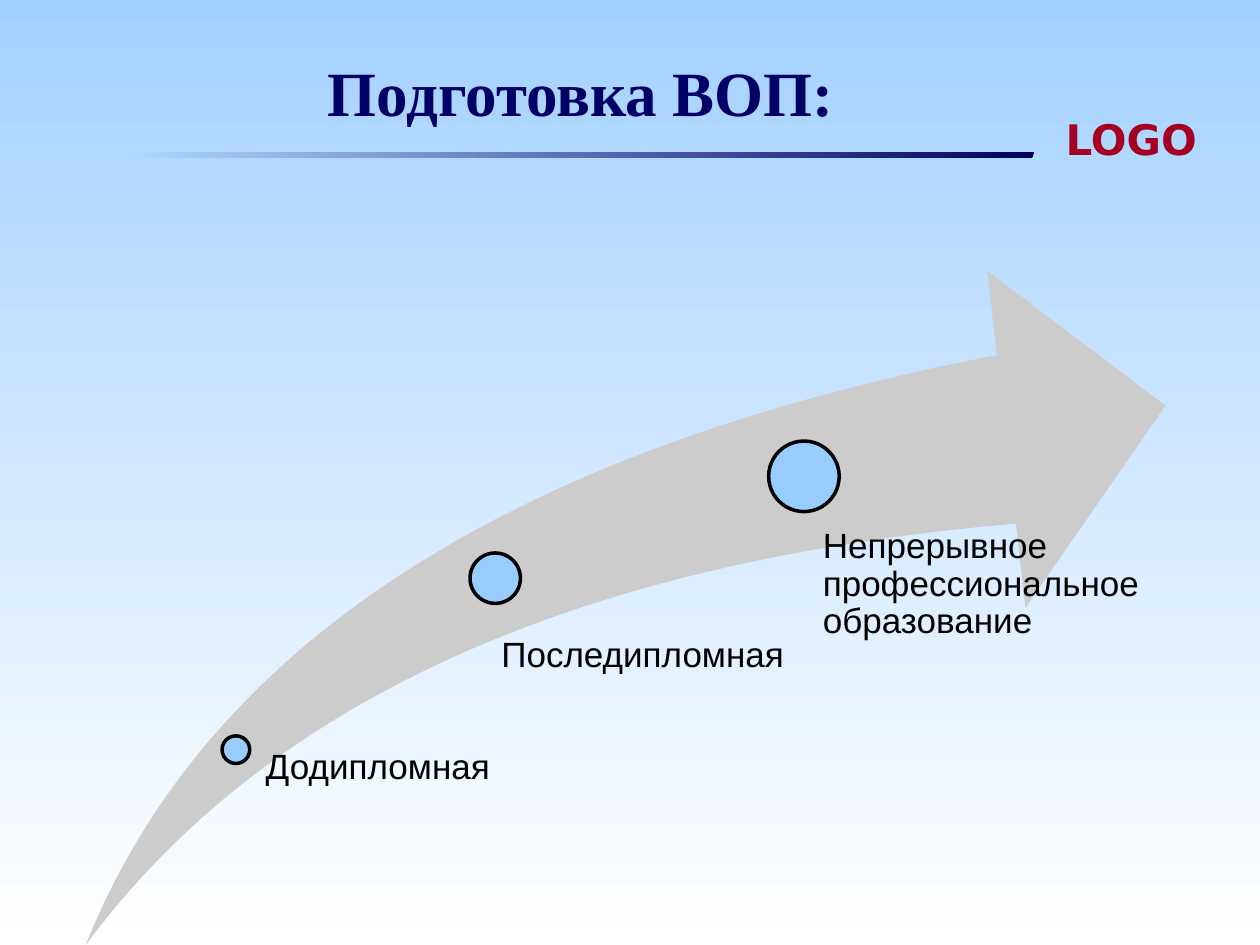
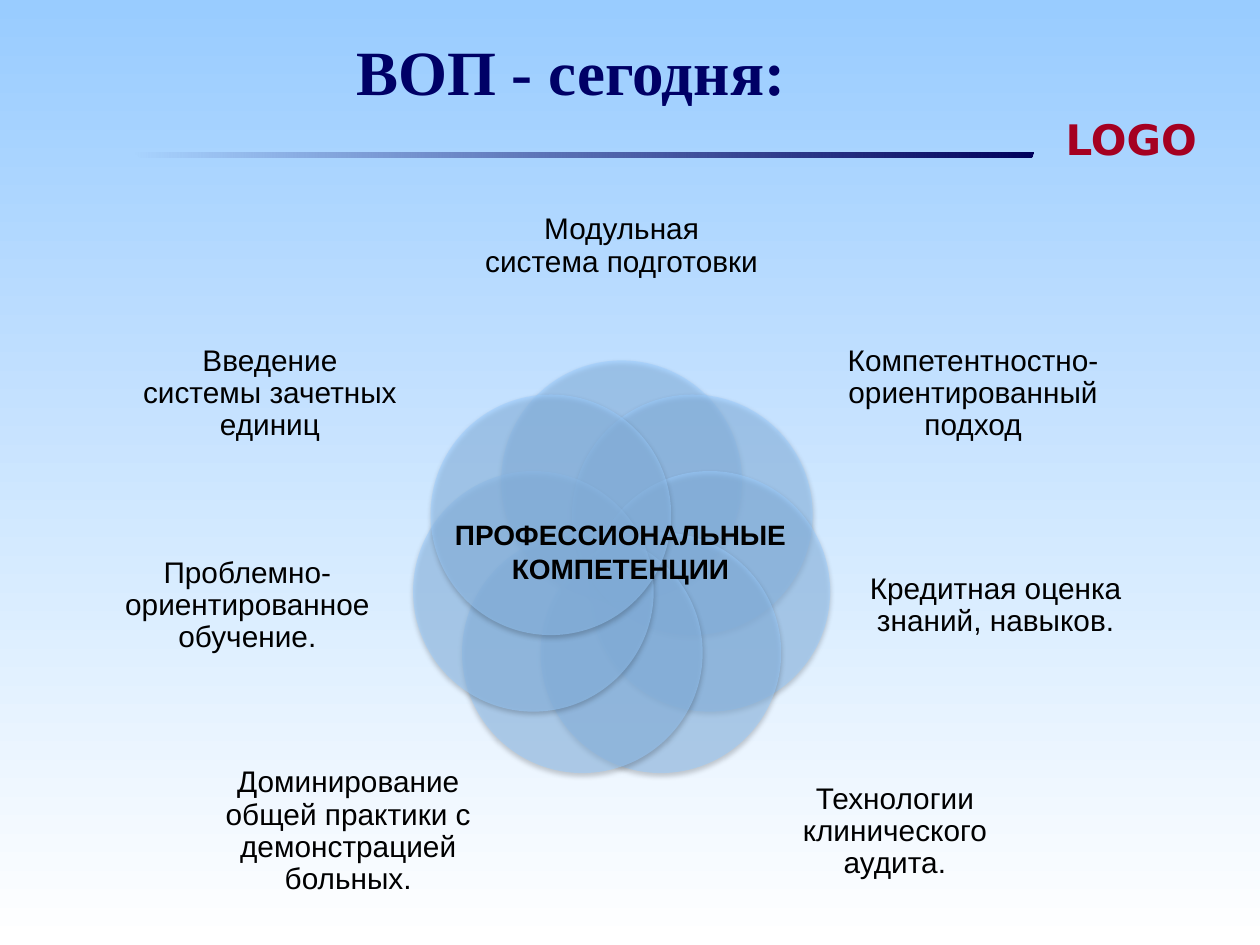
from math import cos, pi, sin
from lxml.etree import SubElement
from pptx import Presentation
from pptx.dml.color import RGBColor
from pptx.enum.shapes import MSO_SHAPE as Preset
from pptx.enum.text import MSO_ANCHOR as Anchor, MSO_AUTO_SIZE as AutoSize, PP_ALIGN as Align
from pptx.oxml.ns import qn
from pptx.util import Pt

NAVY, DEEP_NAVY, RED = "000066", "00005C", "A50021"
SKY, GREY, BLACK, WHITE = "99CCFF", "CCCCCC", "000000", "FFFFFF"
BODY_FONT, TITLE_FONT, MARK_FONT = "Arial", "Times New Roman", "DejaVu Sans"

STAGES = [
    ("Додипломная", (85.8, 273.6, 15.8), (94.3, 273.6, 144, 111.6), 8.6),
    ("Последипломная", (234, 175.6, 28.8), (222.4, 209.5, 186.5, 72), 15.1),
    ("Непрерывное профессиональное образование", (410.4, 117.4, 40.3),
     (399.6, 146.9, 223.2, 154.8), 21.6),
]
COMPETENCES = [
    "Модульная система подготовки",
    "Компетентностно-ориентированный подход",
    "Кредитная оценка знаний, навыков.",
    "Технологии клинического аудита.",
    "Доминирование общей практики с демонстрацией больных.",
    "Проблемно-ориентированное обучение.",
    "Введение системы зачетных единиц",
]
RIGHT_LABELS = [(200.9, -101.4, 149, 92.9), (213.8, 19.9, 146.2, 99.4), (156.2, 148.8, 157.7, 90.7)]
LABEL_PLACES = [(0, -185.6, 157, 84.2), *RIGHT_LABELS,
                *[(-x, y, width, height) for x, y, width, height in reversed(RIGHT_LABELS)]]


def color(value):
    return RGBColor.from_string(value)


def points(*lengths):
    return [Pt(length) for length in lengths]


def set_alpha(shape, percent):
    first_color = next(shape._element.spPr.iter(qn("a:srgbClr")))
    SubElement(first_color, qn("a:alpha"), val=str(percent * 1000))


def set_gradient(fill, start, end, angle):
    fill.gradient()
    fill.gradient_angle = angle
    for stop, value in zip(fill.gradient_stops, (start, end)):
        stop.color.rgb = color(value)


def write(frame, text, size, font=BODY_FONT, ink=BLACK, bold=False, align=Align.LEFT, spacing=None):
    paragraph = frame.paragraphs[0]
    paragraph.alignment = align
    if spacing:
        paragraph.line_spacing = spacing
    run = paragraph.add_run()
    run.text = text
    run.font.size = Pt(size)
    run.font.name = font
    run.font.bold = bold
    run.font.color.rgb = color(ink)


def add_text(slide, box, text, size, insets=(7.2, 3.6, 7.2, 3.6), anchor=Anchor.TOP, **style):
    frame = slide.shapes.add_textbox(*points(*box)).text_frame
    frame.word_wrap = True
    frame.vertical_anchor = anchor
    frame.margin_left, frame.margin_top, frame.margin_right, frame.margin_bottom = points(*insets)
    write(frame, text, size, **style)


def add_preset(slide, preset, box, fill, line_width=None):
    shape = slide.shapes.add_shape(preset, *points(*box))
    shape.shadow.inherit = False
    shape.fill.solid()
    shape.fill.fore_color.rgb = color(fill)
    if line_width:
        shape.line.color.rgb = color(BLACK)
        shape.line.width = Pt(line_width)
    else:
        shape.line.fill.background()
    return shape


def add_circle(slide, center_x, center_y, diameter, line_width=None):
    box = (center_x - diameter / 2, center_y - diameter / 2, diameter, diameter)
    return add_preset(slide, Preset.OVAL, box, SKY, line_width)


def add_title_rule(slide, box):
    left, top, width, height = box
    builder = slide.shapes.build_freeform(Pt(left + width), Pt(top))
    corners = [(0, 0), (4.3, height), (width - 1.4, height)]
    builder.add_line_segments([points(left + x, top + y) for x, y in corners])
    rule = builder.convert_to_shape()
    rule.shadow.inherit = False
    rule.line.fill.background()
    set_gradient(rule.fill, NAVY, DEEP_NAVY, 0)
    set_alpha(rule, 0)


def add_titled_slide(presentation, title, title_box, sky):
    slide = presentation.slides.add_slide(presentation.slide_layouts[5])
    set_gradient(slide.background.fill, sky, WHITE, 270)
    add_title_rule(slide, (75.6, 87.1, 515, 2.9))
    add_text(slide, (601.9, 61.2, 101.5, 36), "LOGO", 24, font=MARK_FONT, ink=RED, bold=True)
    holder = slide.shapes.title
    holder.left, holder.top, holder.width, holder.height = points(*title_box)
    frame = holder.text_frame
    frame.auto_size = AutoSize.NONE
    frame.vertical_anchor = Anchor.MIDDLE
    write(frame, title, 36, font=TITLE_FONT, ink=NAVY, bold=True, align=Align.CENTER)
    return slide


def add_training_path(slide, box):
    left, top, _, _ = box
    arrow = add_preset(slide, Preset.SWOOSH_ARROW, box, GREY)
    arrow.adjustments[0] = arrow.adjustments[1] = 0.25
    for text, (x, y, diameter), (label_x, label_y, width, height), inset in STAGES:
        add_circle(slide, left + x, top + y, diameter, 2)
        add_text(slide, (left + label_x, top + label_y, width, height), text, 20,
                 insets=(inset, 0, 0, 0), spacing=0.9)


def add_petal(slide, center_x, center_y, diameter):
    petal = add_circle(slide, center_x, center_y, diameter)
    set_alpha(petal, 50)
    effects = petal._element.spPr.find(qn("a:effectLst"))
    shadow = SubElement(effects, qn("a:outerShdw"), blurRad=str(Pt(3.1)), dist=str(Pt(1.6)),
                        dir="5400000", rotWithShape="0")
    shade = SubElement(shadow, qn("a:srgbClr"), val=BLACK)
    SubElement(shade, qn("a:alpha"), val="38000")


def add_competence_flower(slide, center_x, center_y, orbit, diameter):
    for index, (text, place) in enumerate(zip(COMPETENCES, LABEL_PLACES)):
        angle = 2 * pi * index / len(COMPETENCES)
        add_petal(slide, center_x + orbit * sin(angle), center_y - orbit * cos(angle), diameter)
        x, y, width, height = place
        label_box = (center_x + x - width / 2, center_y + y - height / 2, width, height)
        add_text(slide, label_box, text, 17, insets=(0, 0, 0, 0), anchor=Anchor.MIDDLE,
                 align=Align.CENTER, spacing=0.9)
    add_text(slide, (center_x - 114, center_y - 34, 226.8, 67.7), "ПРОФЕССИОНАЛЬНЫЕ КОМПЕТЕНЦИИ",
             16, bold=True, align=Align.CENTER)


def main():
    presentation = Presentation()
    presentation.slide_width, presentation.slide_height = points(720, 540)
    path_slide = add_titled_slide(presentation, "Подготовка ВОП:", (25.9, 27.4, 612, 49.7), "A3D1FF")
    add_training_path(path_slide, (49, 154.8, 617, 385.2))
    today_slide = add_titled_slide(presentation, "ВОП - сегодня:", (20.2, 15.1, 612, 49.7), SKY)
    add_competence_flower(today_slide, 355.2, 326.4, 51.7, 137.5)
    presentation.save("out.pptx")


if __name__ == "__main__":
    main()
